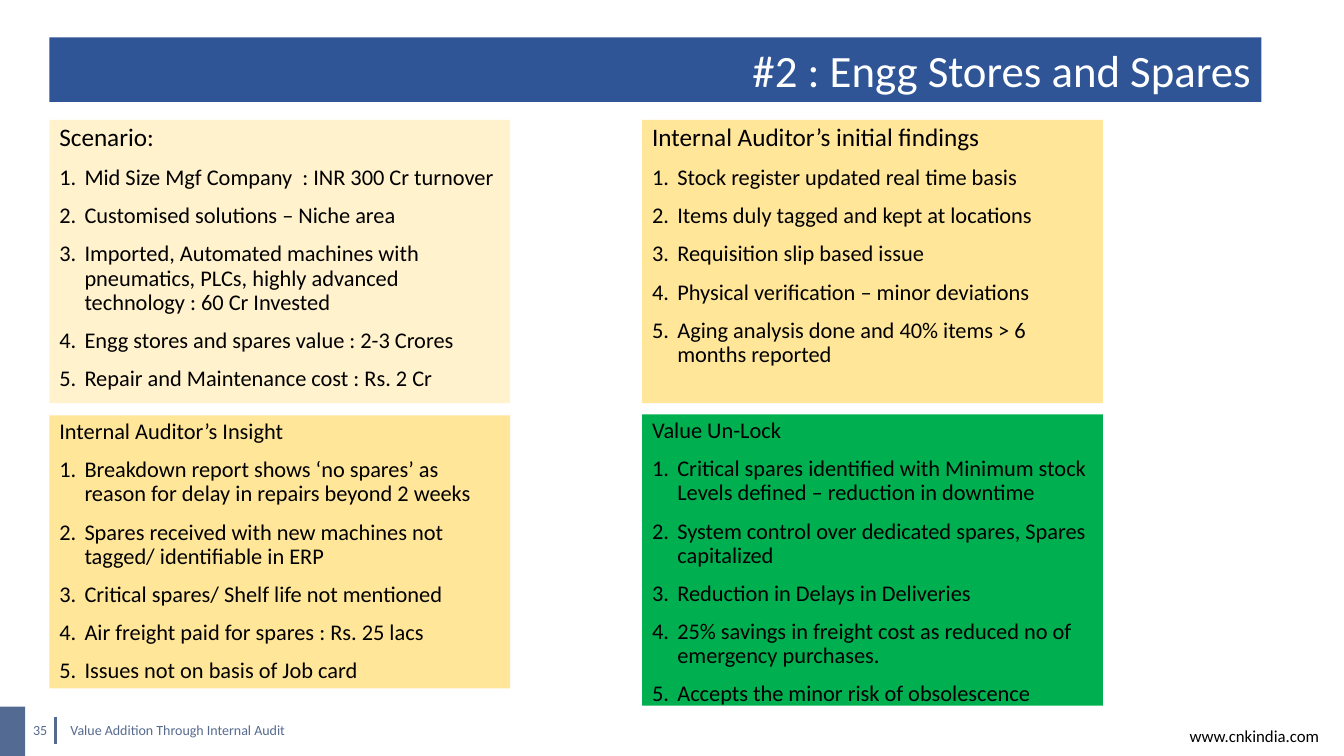
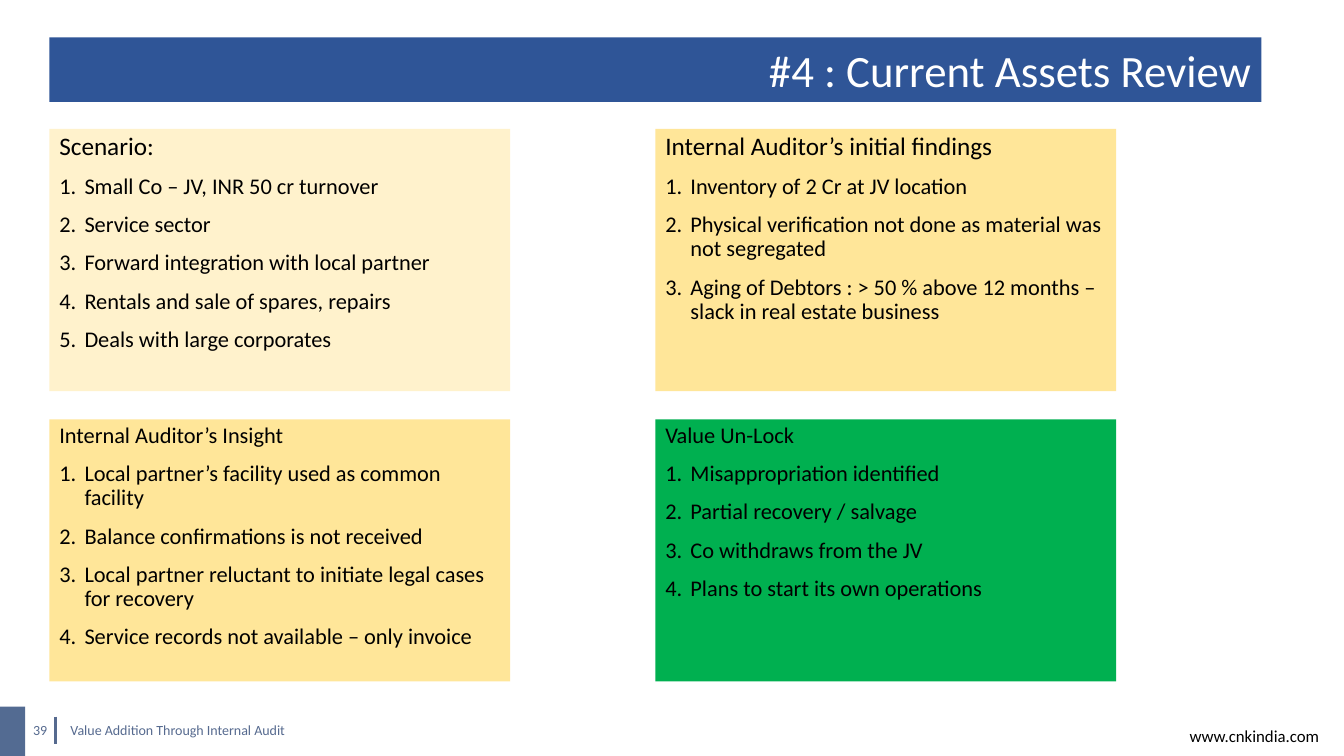
import pptx
import pptx.util
import pptx.dml.color
import pptx.enum.shapes
import pptx.enum.text
import pptx.oxml.ns
import lxml.etree

Inches, Pt = pptx.util.Inches, pptx.util.Pt
RGBColor = pptx.dml.color.RGBColor
Align, Anchor = pptx.enum.text.PP_ALIGN, pptx.enum.text.MSO_ANCHOR
qn = pptx.oxml.ns.qn

FONT = "Calibri"
BLACK = RGBColor(0x00, 0x00, 0x00)
WHITE = RGBColor(0xFF, 0xFF, 0xFF)
BLUE = RGBColor(0x2F, 0x55, 0x97)
SLATE = RGBColor(0x53, 0x6B, 0x92)
GREY = RGBColor(0x56, 0x6A, 0x8F)
CREAM = RGBColor(0xFF, 0xF2, 0xCC)
GOLD = RGBColor(0xFF, 0xE6, 0x99)
GREEN = RGBColor(0x00, 0xB0, 0x50)

FOOTER = "Value Addition Through Internal Audit"
SITE = "www.cnkindia.com"

# Heading, heading size and fill; left to right, then down
PANELS = [
    ("Scenario:", 18, CREAM),
    ("Internal Auditor’s initial findings", 18, GOLD),
    ("Internal Auditor’s Insight", 16, GOLD),
    ("Value Un-Lock", 16, GREEN),
]
LEFT, PANEL_W = 0.49, 4.57

# "right" is the left edge of the right column; "rows" holds top and height
# of each panel, in the order of PANELS
SLIDES = [
    {
        "page": "35",
        "title": "#2 : Engg Stores and Spares",
        "right": 6.37,
        "rows": [(1.19, 2.81), (1.19, 2.81), (4.12, 2.71), (4.11, 2.89)],
        "items": [
            ["Mid Size Mgf Company  : INR 300 Cr turnover",
             "Customised solutions – Niche area",
             "Imported, Automated machines with pneumatics, PLCs, "
             "highly advanced technology : 60 Cr Invested",
             "Engg stores and spares value : 2-3 Crores",
             "Repair and Maintenance cost : Rs. 2 Cr"],
            ["Stock register updated real time basis",
             "Items duly tagged and kept at locations",
             "Requisition slip based issue",
             "Physical verification – minor deviations",
             "Aging analysis done and 40% items > 6 months reported"],
            ["Breakdown report shows ‘no spares’ as reason for delay "
             "in repairs beyond 2 weeks",
             "Spares received with new machines not tagged/ "
             "identifiable in ERP",
             "Critical spares/ Shelf life not mentioned",
             "Air freight paid for spares : Rs. 25 lacs",
             "Issues not on basis of Job card"],
            ["Critical spares identified with Minimum stock Levels "
             "defined – reduction in downtime",
             "System control over dedicated spares, Spares capitalized",
             "Reduction in Delays in Deliveries",
             "25% savings in freight cost as reduced no of emergency "
             "purchases.",
             "Accepts the minor risk of obsolescence"],
        ],
    },
    {
        "page": "39",
        "title": "#4 : Current Assets Review",
        "right": 6.5,
        "rows": [(1.28, 2.6), (1.28, 2.6), (4.16, 2.6), (4.16, 2.6)],
        "items": [
            ["Small Co – JV, INR 50 cr turnover",
             "Service sector",
             "Forward integration with local partner",
             "Rentals and sale of spares, repairs",
             "Deals with large corporates"],
            ["Inventory of 2 Cr at JV location",
             "Physical verification not done as material was not "
             "segregated",
             "Aging of Debtors : > 50 % above 12 months – slack in real "
             "estate business"],
            ["Local partner’s facility used as common facility",
             "Balance confirmations is not received",
             "Local partner reluctant to initiate legal cases for recovery",
             "Service records not available – only invoice"],
            ["Misappropriation identified",
             "Partial recovery / salvage",
             "Co withdraws from the JV",
             "Plans to start its own operations"],
        ],
    },
]


def add_rect(slide, box, fill):
    kind = pptx.enum.shapes.MSO_SHAPE.RECTANGLE
    rect = slide.shapes.add_shape(kind, *map(Inches, box))
    rect.shadow.inherit = False
    rect.fill.solid()
    rect.fill.fore_color.rgb = fill
    rect.line.fill.background()
    frame = rect.text_frame
    frame.word_wrap = True
    frame.vertical_anchor = Anchor.TOP
    return frame


def add_run(para, text, size, color, align=Align.LEFT):
    para.alignment = align
    run = para.add_run()
    run.text = text
    run.font.name = FONT
    run.font.size = Pt(size)
    run.font.color.rgb = color


def add_label(slide, box, text, size, color, anchor=Anchor.TOP):
    frame = slide.shapes.add_textbox(*map(Inches, box)).text_frame
    frame.word_wrap = True
    frame.vertical_anchor = anchor
    add_run(frame.paragraphs[0], text, size, color)


def number(para):
    """Give the paragraph a hanging automatic number."""
    props = para._p.get_or_add_pPr()
    props.set("marL", str(Inches(0.25)))
    props.set("indent", str(Inches(-0.25)))
    lxml.etree.SubElement(props, qn("a:buFont"), typeface="+mj-lt")
    lxml.etree.SubElement(props, qn("a:buAutoNum"), type="arabicPeriod")


def add_panel(slide, box, panel, items):
    heading, size, fill = panel
    frame = add_rect(slide, box, fill)
    para = frame.paragraphs[0]
    para.line_spacing = 0.9
    add_run(para, heading, size, BLACK)
    for item in items:
        para = frame.add_paragraph()
        number(para)
        para.line_spacing = 0.9
        para.space_before = Pt(10)
        add_run(para, item, 16, BLACK)


def add_frame(slide, title, page):
    """Draw the title band and the footer."""
    add_rect(slide, (0, 7.01, 0.25, 0.49), SLATE)
    add_label(slide, (0.23, 7.04, 0.41, 0.4), page, 10, GREY, Anchor.MIDDLE)
    rule = slide.shapes.add_connector(
        pptx.enum.shapes.MSO_CONNECTOR.STRAIGHT,
        *map(Inches, (0.55, 7.11, 0.55, 7.38)))
    rule.line.color.rgb = GREY
    rule.line.width = Pt(1.75)
    lxml.etree.SubElement(rule._element.spPr, qn("a:effectLst"))
    band = add_rect(slide, (LEFT, 0.37, 12.02, 0.64), BLUE)
    add_run(band.paragraphs[0], title, 32, WHITE, Align.RIGHT)
    add_label(slide, (0.6, 7.11, 2.72, 0.44), FOOTER, 10, GREY)
    add_label(slide, (11.7, 7.15, 1.6, 0.3), SITE, 12, BLACK)


def main():
    deck = pptx.Presentation()
    deck.slide_width, deck.slide_height = Inches(13.33), Inches(7.5)
    for data in SLIDES:
        slide = deck.slides.add_slide(deck.slide_layouts[6])
        add_frame(slide, data["title"], data["page"])
        parts = zip(PANELS, data["rows"], data["items"])
        for i, (panel, (top, height), items) in enumerate(parts):
            left = data["right"] if i % 2 else LEFT
            add_panel(slide, (left, top, PANEL_W, height), panel, items)
    deck.save("out.pptx")


if __name__ == "__main__":
    main()
